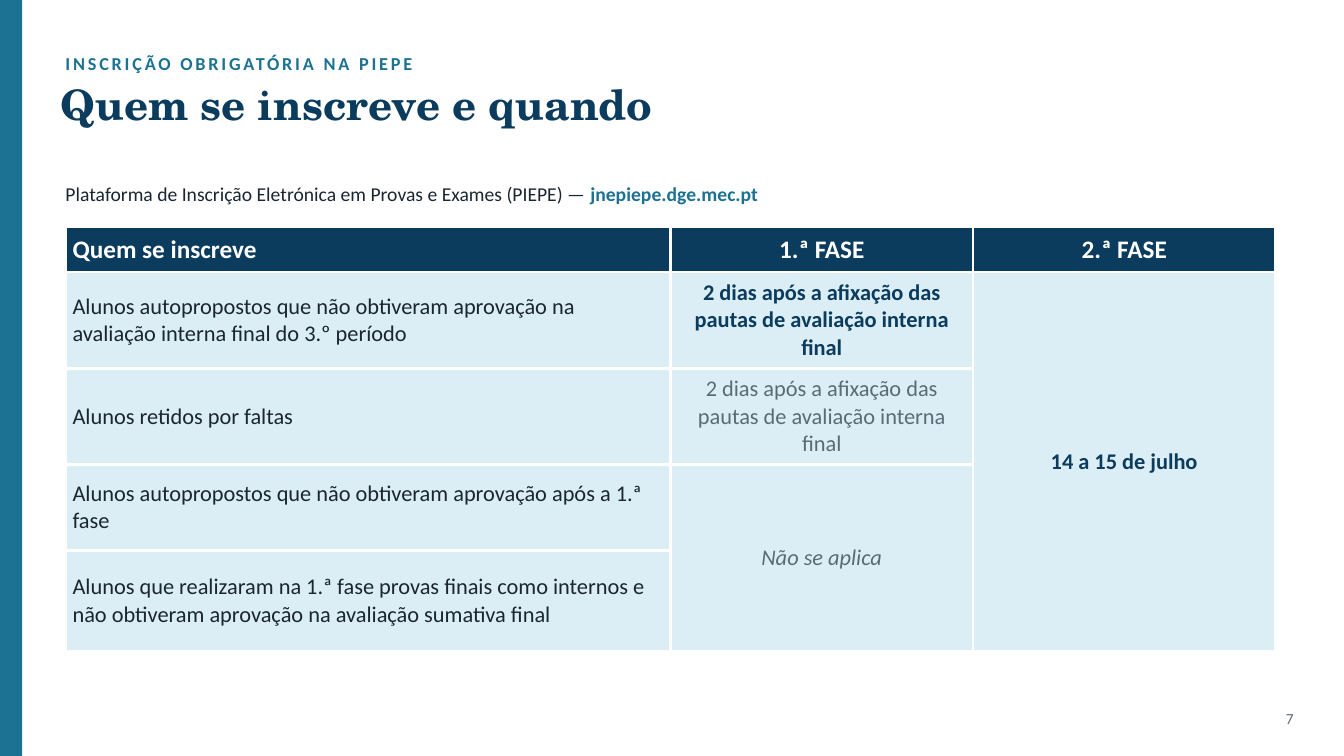
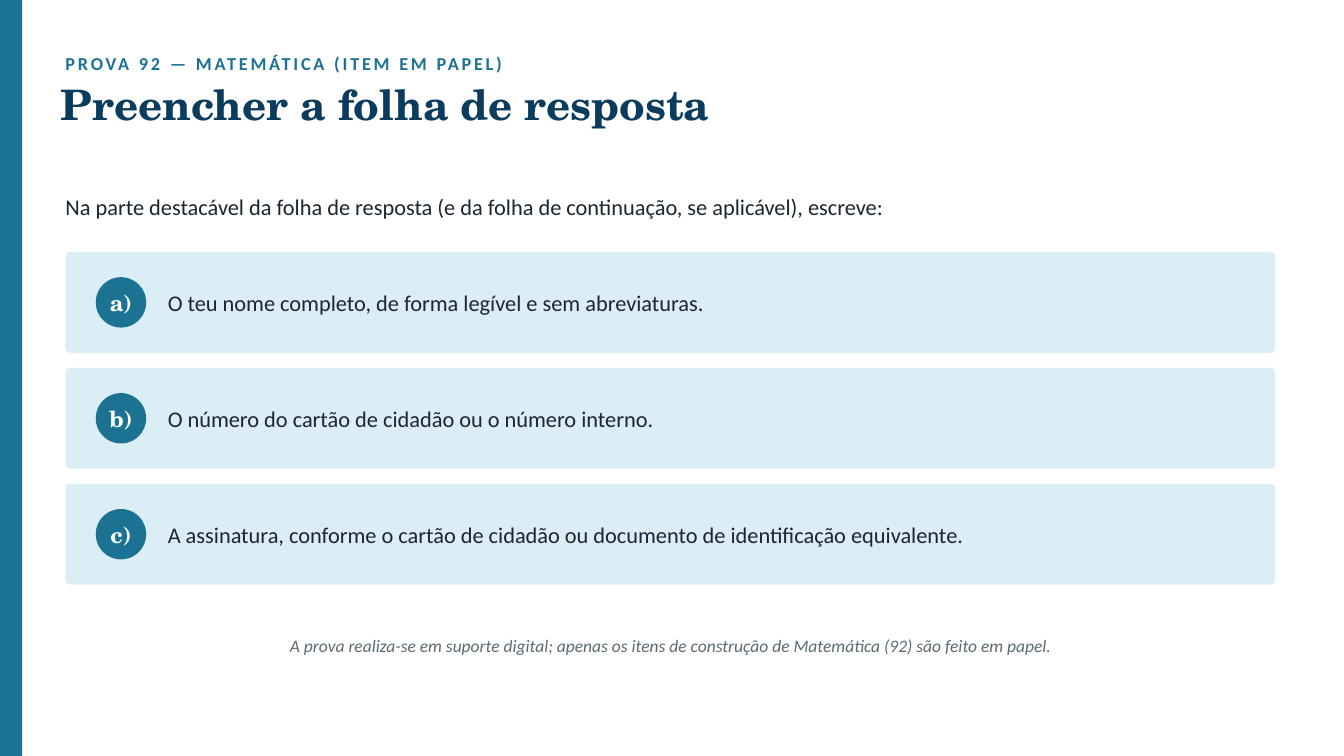
from dataclasses import dataclass

from lxml.etree import SubElement
from pptx import Presentation
from pptx.dml.color import RGBColor
from pptx.enum.shapes import MSO_SHAPE
from pptx.enum.text import MSO_ANCHOR, MSO_AUTO_SIZE, PP_ALIGN
from pptx.oxml.ns import qn
from pptx.util import Inches, Pt

COLORS = {
    "white": "FFFFFF",
    "navy": "0B3C5D",
    "teal": "1C7293",
    "pale": "DCEEF5",
    "ink": "1A2630",
    "grey": "5A6B75",
}
SANS = "Calibri"
SERIF = "TeX Gyre Schola"
TITLE_ONLY = 5
LEFT, WIDTH = 0.65, 12
CARD_TOP, CARD_HEIGHT, CARD_GAP = 2.5, 1, 0.15
BADGE_SIZE, BADGE_INDENT, CARD_TEXT_INDENT = 0.5, 0.3, 1
CELL_MARGIN = 0.07
COLUMN_WIDTHS = (6, 3, 3)
ROW_HEIGHTS = (0.45, 0.95, 0.7, 0.85, 1)


@dataclass(frozen=True)
class Entry:
    """A table cell with its format and the number of rows it covers."""
    row: int
    column: int
    text: str
    color: str = "ink"
    bold: bool = False
    italic: bool = False
    rows: int = 1


@dataclass(frozen=True)
class Step:
    letter: str
    instruction: str


DEADLINE = "2 dias após a afixação das pautas de avaliação interna final"
ENTRIES = (
    Entry(0, 0, "Quem se inscreve", "white", bold=True),
    Entry(0, 1, "1.ª FASE", "white", bold=True),
    Entry(0, 2, "2.ª FASE", "white", bold=True),
    Entry(1, 0, "Alunos autopropostos que não obtiveram aprovação na avaliação "
                "interna final do 3.º período"),
    Entry(1, 1, DEADLINE, "navy", bold=True),
    Entry(1, 2, "14 a 15 de julho", "navy", bold=True, rows=4),
    Entry(2, 0, "Alunos retidos por faltas"),
    Entry(2, 1, DEADLINE, "grey"),
    Entry(3, 0, "Alunos autopropostos que não obtiveram aprovação após a 1.ª fase"),
    Entry(3, 1, "Não se aplica", "grey", italic=True, rows=2),
    Entry(4, 0, "Alunos que realizaram na 1.ª fase provas finais como internos e "
                "não obtiveram aprovação na avaliação sumativa final"),
)
STEPS = (
    Step("a)", "O teu nome completo, de forma legível e sem abreviaturas."),
    Step("b)", "O número do cartão de cidadão ou o número interno."),
    Step("c)", "A assinatura, conforme o cartão de cidadão ou documento de "
               "identificação equivalente."),
)


def rgb(name: str) -> RGBColor:
    return RGBColor.from_string(COLORS[name])


def write(frame, text: str, *, size: float = 16, font: str = SANS, color: str = "ink",
          bold: bool = False, italic: bool = False, align=PP_ALIGN.LEFT,
          spacing: float = 0) -> None:
    """Append a formatted run to the first paragraph; spacing is in points."""
    paragraph = frame.paragraphs[0]
    paragraph.alignment = align
    run = paragraph.add_run()
    run.text = text
    run.font.size = Pt(size)
    run.font.name = font
    run.font.bold = bold
    run.font.italic = italic
    run.font.color.rgb = rgb(color)
    if spacing:
        run._r.get_or_add_rPr().set("spc", str(round(spacing * 100)))


def prepare(frame, anchor=MSO_ANCHOR.MIDDLE, inset: float = 0) -> None:
    frame.word_wrap = True
    frame.auto_size = MSO_AUTO_SIZE.NONE
    frame.vertical_anchor = anchor
    frame.margin_left = frame.margin_right = Inches(inset)
    frame.margin_top = frame.margin_bottom = Inches(0)


def add_text(slide, text: str, left: float, top: float, width: float, height: float,
             inset: float = 0, **text_format):
    box = slide.shapes.add_textbox(Inches(left), Inches(top), Inches(width), Inches(height))
    prepare(box.text_frame, inset=inset)
    write(box.text_frame, text, **text_format)
    return box.text_frame


def add_block(slide, kind, left: float, top: float, width: float, height: float, fill: str):
    block = slide.shapes.add_shape(
        kind, Inches(left), Inches(top), Inches(width), Inches(height))
    block.shadow.inherit = False
    block.fill.solid()
    block.fill.fore_color.rgb = rgb(fill)
    block.line.fill.background()
    prepare(block.text_frame)
    return block


def add_page(deck, kicker: str, heading: str):
    """Add a slide with the side band, kicker and title that all pages share."""
    slide = deck.slides.add_slide(deck.slide_layouts[TITLE_ONLY])
    add_block(slide, MSO_SHAPE.RECTANGLE, 0, 0, 0.22, 7.5, "teal")
    add_text(slide, kicker, LEFT, 0.45, 11, 0.35, size=13, color="teal", bold=True, spacing=2)
    title = slide.shapes.title
    title.left, title.top = Inches(0.6), Inches(0.78)
    title.width, title.height = Inches(12.1), Inches(0.95)
    prepare(title.text_frame, MSO_ANCHOR.TOP)
    write(title.text_frame, heading, size=30, font=SERIF, color="navy", bold=True)
    return slide


def add_borders(cell) -> None:
    properties = cell._tc.get_or_add_tcPr()
    for side in ("lnL", "lnR", "lnT", "lnB"):
        border = SubElement(properties, qn(f"a:{side}"), w=str(Pt(2)))
        fill = SubElement(border, qn("a:solidFill"))
        SubElement(fill, qn("a:srgbClr"), val=COLORS["white"])


def add_schedule(slide) -> None:
    table = slide.shapes.add_table(
        len(ROW_HEIGHTS), len(COLUMN_WIDTHS), Inches(LEFT), Inches(2.25),
        Inches(WIDTH), Inches(sum(ROW_HEIGHTS))).table
    for column, width in zip(table.columns, COLUMN_WIDTHS):
        column.width = Inches(width)
    for row_number, (row, height) in enumerate(zip(table.rows, ROW_HEIGHTS)):
        row.height = Inches(height)
        for cell in row.cells:
            add_borders(cell)
            cell.fill.solid()
            cell.fill.fore_color.rgb = rgb("pale" if row_number else "navy")
            cell.vertical_anchor = MSO_ANCHOR.MIDDLE
            cell.margin_left = cell.margin_right = Inches(CELL_MARGIN)
            cell.margin_top = cell.margin_bottom = Inches(CELL_MARGIN)
    for entry in ENTRIES:
        cell = table.cell(entry.row, entry.column)
        if entry.rows > 1:
            cell.merge(table.cell(entry.row + entry.rows - 1, entry.column))
        write(cell.text_frame, entry.text, size=16 if entry.row else 18,
              color=entry.color, bold=entry.bold, italic=entry.italic,
              align=PP_ALIGN.CENTER if entry.column else PP_ALIGN.LEFT)


def add_step(slide, step: Step, top: float) -> None:
    card = add_block(slide, MSO_SHAPE.ROUNDED_RECTANGLE, LEFT, top, WIDTH, CARD_HEIGHT, "pale")
    card.adjustments[0] = 0.05
    card.text_frame.margin_left = Inches(CARD_TEXT_INDENT)
    write(card.text_frame, step.instruction)
    badge = add_block(slide, MSO_SHAPE.OVAL, LEFT + BADGE_INDENT,
                      top + (CARD_HEIGHT - BADGE_SIZE) / 2, BADGE_SIZE, BADGE_SIZE, "teal")
    badge.text_frame.word_wrap = False
    write(badge.text_frame, step.letter, font=SERIF, color="white", bold=True,
          align=PP_ALIGN.CENTER)


def add_registration_page(deck) -> None:
    slide = add_page(deck, "INSCRIÇÃO OBRIGATÓRIA NA PIEPE", "Quem se inscreve e quando")
    platform = add_text(
        slide, "Plataforma de Inscrição Eletrónica em Provas e Exames (PIEPE) — ",
        LEFT, 1.7, WIDTH, 0.45, size=14)
    write(platform, "jnepiepe.dge.mec.pt", size=14, color="teal", bold=True)
    add_schedule(slide)
    add_text(slide, "7", 12.43, 6.95, 0.5, 0.35, inset=0.1, size=11, color="grey",
             align=PP_ALIGN.RIGHT)


def add_answer_sheet_page(deck) -> None:
    slide = add_page(deck, "PROVA 92 — MATEMÁTICA (ITEM EM PAPEL)",
                     "Preencher a folha de resposta")
    add_text(slide, "Na parte destacável da folha de resposta (e da folha de continuação, "
                    "se aplicável), escreve:", LEFT, 1.8, WIDTH, 0.5)
    for position, step in enumerate(STEPS):
        add_step(slide, step, CARD_TOP + position * (CARD_HEIGHT + CARD_GAP))
    add_text(slide, "A prova realiza-se em suporte digital; apenas os itens de construção "
                    "de Matemática (92) são feito em papel.", LEFT, 6.15, WIDTH, 0.5,
             size=12.5, color="grey", italic=True, align=PP_ALIGN.CENTER)


def main() -> None:
    deck = Presentation()
    deck.slide_width, deck.slide_height = Inches(13.33), Inches(7.5)
    add_registration_page(deck)
    add_answer_sheet_page(deck)
    deck.save("out.pptx")


if __name__ == "__main__":
    main()
